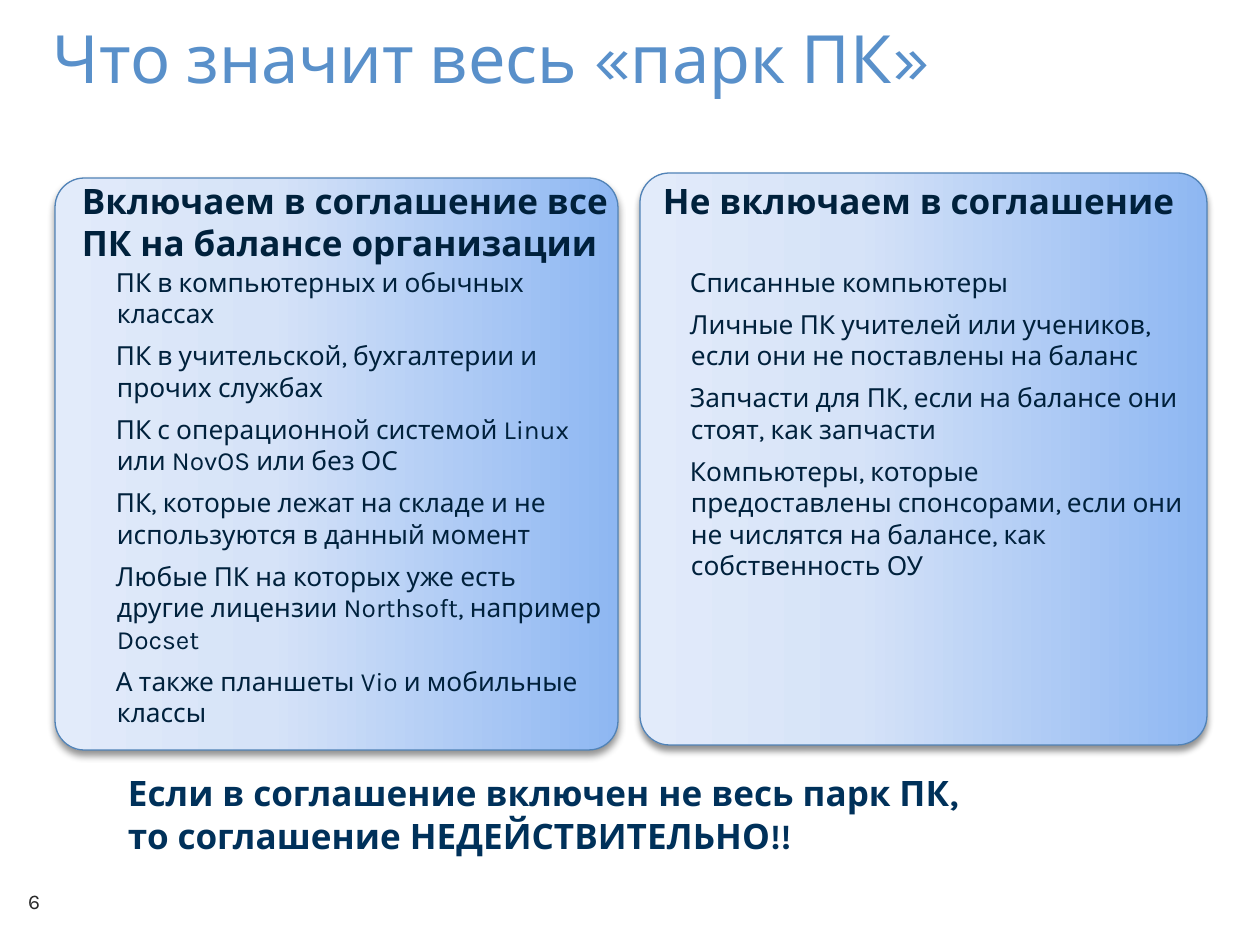
from lxml.etree import SubElement
from pptx import Presentation
from pptx.dml.color import RGBColor
from pptx.enum.shapes import MSO_SHAPE
from pptx.enum.text import MSO_ANCHOR, MSO_AUTO_SIZE, PP_ALIGN
from pptx.oxml import parse_xml
from pptx.oxml.ns import nsdecls, qn
from pptx.util import Pt

SCALE = 914400 / 126
FONT = "Karla"
BLUE = RGBColor(0x59, 0x90, 0xCA)
EDGE = RGBColor(0x51, 0x83, 0xB7)
NAVY = RGBColor(0x00, 0x21, 0x3C)
DEEP = RGBColor(0x00, 0x31, 0x5A)
GRAY = RGBColor(0x29, 0x29, 0x29)
BLACK = RGBColor(0x00, 0x00, 0x00)
SHADES = (
    (0, RGBColor(0x8E, 0xB7, 0xF2)),
    (62, RGBColor(0xD6, 0xE3, 0xF8)),
    (100, RGBColor(0xE2, 0xEB, 0xFA)),
)

LEFT = [
    "ПК в компьютерных и обычных классах",
    "ПК в учительской, бухгалтерии и прочих службах",
    "ПК с операционной системой Linux или NovOS или без ОС",
    "ПК, которые лежат на складе и не используются в данный момент",
    "Любые ПК на которых уже есть другие лицензии Northsoft, например Docset",
    "А также планшеты Vio и мобильные классы",
]
RIGHT = [
    "Списанные компьютеры",
    "Личные ПК учителей или учеников, если они не поставлены на баланс",
    "Запчасти для ПК, если на балансе они стоят, как запчасти",
    "Компьютеры, которые предоставлены спонсорами, если они не числятся на "
    "балансе, как собственность ОУ",
]


def px(num):
    """Turn pixels into EMU."""
    return round(num * SCALE)


def write(frame, lines, size, color, bold=False, gap=0, indent=0, hang=0,
          pad=0, anchor=MSO_ANCHOR.TOP, pitch=None):
    """Fill a text frame with evenly formatted paragraphs."""
    frame.word_wrap = True
    frame.auto_size = MSO_AUTO_SIZE.NONE
    frame.vertical_anchor = anchor
    frame.margin_left = frame.margin_right = px(pad)
    frame.margin_top = frame.margin_bottom = px(pad / 2)
    for num, line in enumerate(lines):
        para = frame.add_paragraph() if num else frame.paragraphs[0]
        para.alignment = PP_ALIGN.LEFT
        para.space_before = Pt(gap if num else 0)
        if pitch:
            para.line_spacing = Pt(pitch)
        if indent:
            props = para._p.get_or_add_pPr()
            props.set("marL", str(px(indent)))
            props.set("indent", str(px(hang)))
        run = para.add_run()
        run.text = line
        font = run.font
        font.name, font.size, font.bold = FONT, Pt(size), bold
        font.color.rgb = color


def label(slide, box, lines, size, color, **style):
    """Add a text box."""
    shape = slide.shapes.add_textbox(*map(px, box))
    write(shape.text_frame, lines, size, color, **style)


def shade(shape):
    """Give a shape its gradient and soft shadow."""
    shape.fill.gradient()
    shape.fill.gradient_angle = 180
    stops = shape._element.spPr.find(qn("a:gradFill")).find(qn("a:gsLst"))
    for stop in list(stops):
        stops.remove(stop)
    for pos, color in SHADES:
        stop = SubElement(stops, qn("a:gs"), pos=str(pos * 1000))
        SubElement(stop, qn("a:srgbClr"), val=str(color))
    shape.shadow.inherit = False
    effects = shape._element.spPr.find(qn("a:effectLst"))
    effects.append(parse_xml(
        f'<a:outerShdw {nsdecls("a")} blurRad="{Pt(4)}" dist="{Pt(3)}" '
        f'dir="5400000" rotWithShape="0"><a:srgbClr val="{BLACK}">'
        '<a:alpha val="43000"/></a:srgbClr></a:outerShdw>'))


def card(slide, box, head, items, inset, drop, shift):
    """Draw a rounded card with a heading and a list."""
    left, top, wide, high = box
    shape = slide.shapes.add_shape(MSO_SHAPE.ROUNDED_RECTANGLE, *map(px, box))
    shape.adjustments[0] = 0.052
    shade(shape)
    shape.line.color.rgb = EDGE
    shape.line.width = Pt(0.75)
    label(slide, (left + inset, top + drop, 544, 84), [head], 20, NAVY,
          bold=True)
    label(slide, (left + shift, top + drop + 87, 541, high - drop - 87),
          items, 15, NAVY, gap=6, indent=48, hang=-1)


def heading(slide, box, text):
    """Place and format the title."""
    title = slide.shapes.title
    title.left, title.top, title.width, title.height = map(px, box)
    write(title.text_frame, [text], 38, BLUE, pitch=34)


def main():
    """Build and save the slide."""
    deck = Presentation()
    deck.slide_width, deck.slide_height = px(1260), px(945)
    slide = deck.slides.add_slide(deck.slide_layouts[5])
    heading(slide, (53, 37, 1155, 92), "Что значит весь «парк ПК»")
    card(slide, (640, 173, 567, 572), "Не включаем в соглашение", RIGHT,
         23, 6, 3)
    card(slide, (55, 178, 563, 572),
         "Включаем в соглашение все ПК на балансе организации", LEFT,
         27, 1, 14)
    label(slide, (128, 772, 854, 90),
          ["Если в соглашение включен не весь парк ПК,",
           "то соглашение НЕДЕЙСТВИТЕЛЬНО!!"], 20, DEEP, bold=True)
    label(slide, (16, 876, 84, 50), ["6"], 12, GRAY, pad=12,
          anchor=MSO_ANCHOR.MIDDLE)
    deck.save("out.pptx")


if __name__ == "__main__":
    main()
